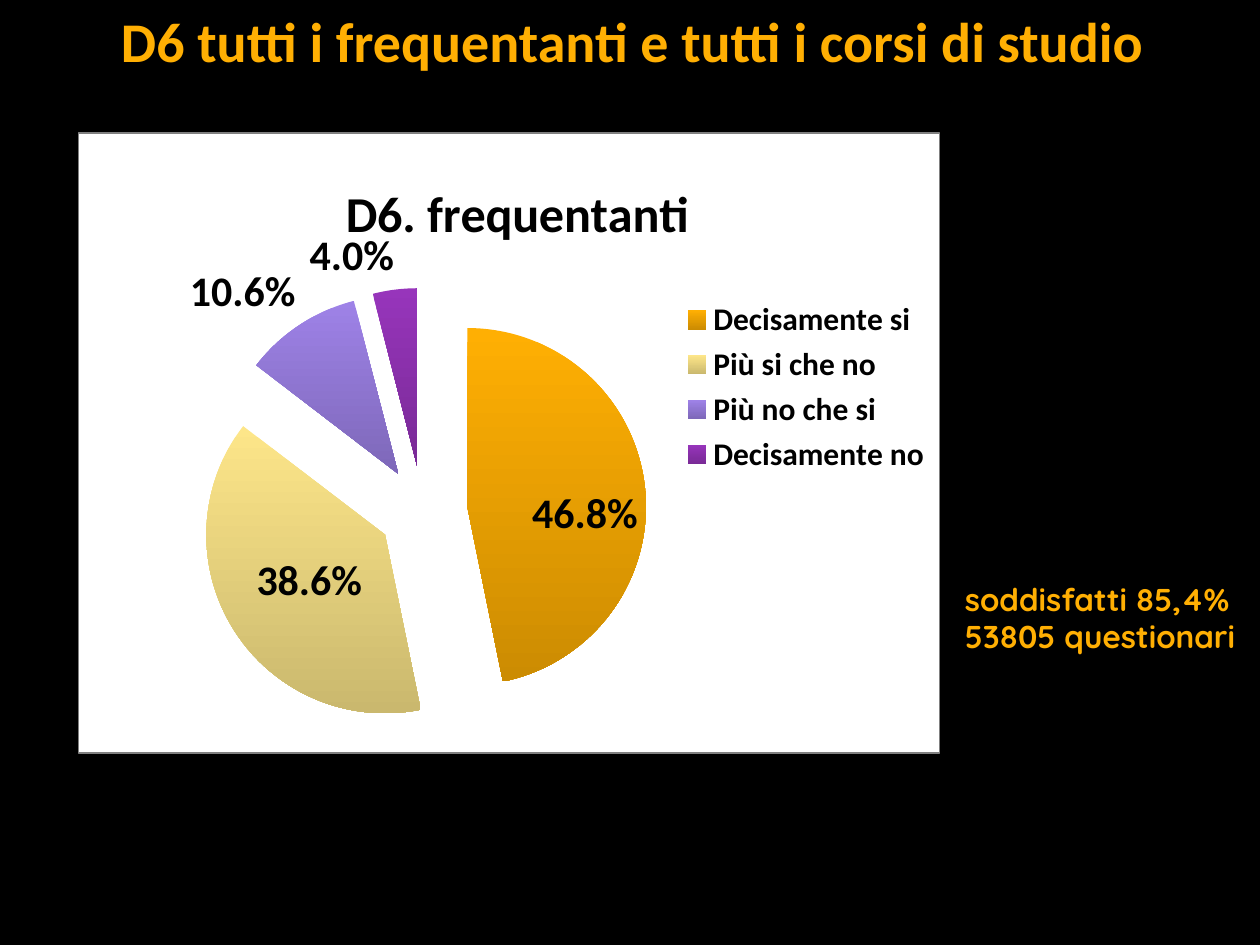
"""Build the D6 slide: satisfaction of attending students as an exploded pie."""
from dataclasses import dataclass
from typing import NamedTuple

from lxml import etree
from pptx import Presentation
from pptx import util as u
from pptx.chart.data import CategoryChartData
from pptx.dml.color import RGBColor
from pptx.enum import chart as ch, text
from pptx.oxml import parse_xml
from pptx.oxml.ns import nsdecls, qn


@dataclass(frozen=True)
class Theme:
    """Colours, fonts and type sizes of the slide."""

    background: str = "000000"
    accent: str = "FFAF03"
    ink: str = "000000"
    panel: str = "FFFFFF"
    border: str = "808080"
    font: str = "Calibri"
    note_font: str = "Quicksand"
    heading_size: float = 32
    chart_title_size: float = 28.8
    label_size: float = 24
    small_size: float = 18
    shade: float = 0.8


class Box(NamedTuple):
    """Left, top, width and height, in points or as chart fractions."""

    left: float
    top: float
    width: float
    height: float


class Answer(NamedTuple):
    """One answer with its share, colour and label position."""

    name: str
    share: float
    color: str
    label_at: ch.XL_LABEL_POSITION


THEME = Theme()
LABEL = ch.XL_LABEL_POSITION
SHARE_FORMAT = "####.0%"
ANSWERS = [
    Answer("Decisamente si", 0.468, "FFAF03", LABEL.INSIDE_END),
    Answer("Più si che no", 0.386, "FDE689", LABEL.CENTER),
    Answer("Più no che si", 0.106, "9E82E7", LABEL.OUTSIDE_END),
    Answer("Decisamente no", 0.04, "9735BB", LABEL.OUTSIDE_END),
]


def style_font(font, size: float, color: str, name: str = THEME.font) -> None:
    """Apply bold type in one face, size and colour."""
    font.name, font.size, font.bold = name, u.Pt(size), True
    font.color.rgb = RGBColor.from_string(color)


def darker(color: str) -> RGBColor:
    """Return the colour darkened by the theme's shade."""
    return RGBColor(*(round(part * THEME.shade) for part in bytes.fromhex(color)))


def add_lines(slide, box: Box, lines: list[str], size: float, face: str, align) -> None:
    """Add a text box with one paragraph per line."""
    frame = slide.shapes.add_textbox(*map(u.Pt, box)).text_frame
    frame.word_wrap = True
    frame.text = "\n".join(lines)
    for paragraph in frame.paragraphs:
        paragraph.alignment = align
        style_font(paragraph.runs[0].font, size, THEME.accent, face)


def place(parent, index: int, box: Box, inner: bool = False) -> None:
    """Give a chart part a manual layout at the given child index."""
    for old in parent.findall(qn("c:layout")):
        parent.remove(old)
    target = '<c:layoutTarget val="inner"/>' if inner else ""
    modes = '<c:xMode val="edge"/><c:yMode val="edge"/>'
    sizes = "".join(
        f'<c:{tag} val="{value}"/>' for tag, value in zip("xywh", box) if value
    )
    parent.insert(index, parse_xml(
        f'<c:layout {nsdecls("c")}><c:manualLayout>{target}{modes}{sizes}'
        "</c:manualLayout></c:layout>"
    ))


def style_panel(chart) -> None:
    """Fill and outline the chart area."""
    panel = parse_xml(
        f'<c:spPr {nsdecls("c", "a")}>'
        f'<a:solidFill><a:srgbClr val="{THEME.panel}"/></a:solidFill>'
        f'<a:ln w="{u.Pt(0.75)}"><a:solidFill><a:srgbClr val="{THEME.border}"/>'
        "</a:solidFill></a:ln></c:spPr>"
    )
    chart.element.find(qn("c:chart")).addnext(panel)


def style_slice(point, answer: Answer) -> None:
    """Shade a slice from top to bottom and set its label."""
    fill = point.format.fill
    fill.gradient()
    fill.gradient_angle = 270
    first, last = fill.gradient_stops
    first.color.rgb, first.position = RGBColor.from_string(answer.color), 0
    last.color.rgb, last.position = darker(answer.color), 1
    style_font(point.data_label.font, THEME.label_size, THEME.ink)
    point.data_label.position = answer.label_at


def add_pie(slide, box: Box, answers: list[Answer]) -> None:
    """Add the exploded pie with title, legend and labels."""
    data = CategoryChartData(number_format=SHARE_FORMAT)
    data.categories = [answer.name for answer in answers]
    data.add_series("Series 1", [answer.share for answer in answers])
    chart = slide.shapes.add_chart(
        ch.XL_CHART_TYPE.PIE, *map(u.Pt, box), data
    ).chart
    style_font(chart.font, THEME.label_size, THEME.ink)
    style_panel(chart)

    chart.has_title = True
    heading = chart.chart_title.text_frame
    heading.text = "D6. frequentanti"
    style_font(heading.paragraphs[0].runs[0].font, THEME.chart_title_size, THEME.ink)
    place(heading._txBody.getparent().getparent(), 1, Box(0.3, 0.06, 0, 0))

    chart.has_legend = True
    legend = chart.legend
    legend.position = ch.XL_LEGEND_POSITION.RIGHT
    legend.include_in_layout = False
    style_font(legend.font, THEME.small_size, THEME.ink)
    place(legend._element, 1, Box(0.7, 0.26, 0.29, 0.3))

    pie = chart.plots[0]
    pie.vary_by_categories = True
    place(pie._element.getparent(), 0, Box(0.08, 0.25, 0.64, 0.72), inner=True)
    series = pie.series[0]
    for index, answer in enumerate(answers):
        style_slice(series.points[index], answer)
    labels = series.data_labels
    labels.show_value = True
    labels.show_percentage = False
    labels.show_legend_key = False
    labels.number_format, labels.number_format_is_linked = SHARE_FORMAT, False
    style_font(labels.font, THEME.label_size, THEME.ink)
    explosion = etree.Element(qn("c:explosion"), val="25")
    series._element.find(qn("c:tx")).addnext(explosion)


def main() -> None:
    """Build and save the slide."""
    deck = Presentation()
    deck.slide_width, deck.slide_height = u.Pt(720), u.Pt(540)
    slide = deck.slides.add_slide(deck.slide_layouts[6])
    slide.background.fill.solid()
    slide.background.fill.fore_color.rgb = RGBColor.from_string(THEME.background)
    add_lines(
        slide, Box(49.7, 0, 623.5, 62),
        ["D6 tutti i frequentanti e tutti i corsi di studio"],
        THEME.heading_size, THEME.font, text.PP_ALIGN.CENTER,
    )
    add_lines(
        slide, Box(544.3, 327.6, 175.7, 51),
        ["soddisfatti 85,4%", "53805 questionari"],
        THEME.small_size, THEME.note_font, text.PP_ALIGN.LEFT,
    )
    add_pie(slide, Box(44.6, 75.6, 492.5, 355), ANSWERS)
    deck.save("out.pptx")


if __name__ == "__main__":
    main()
